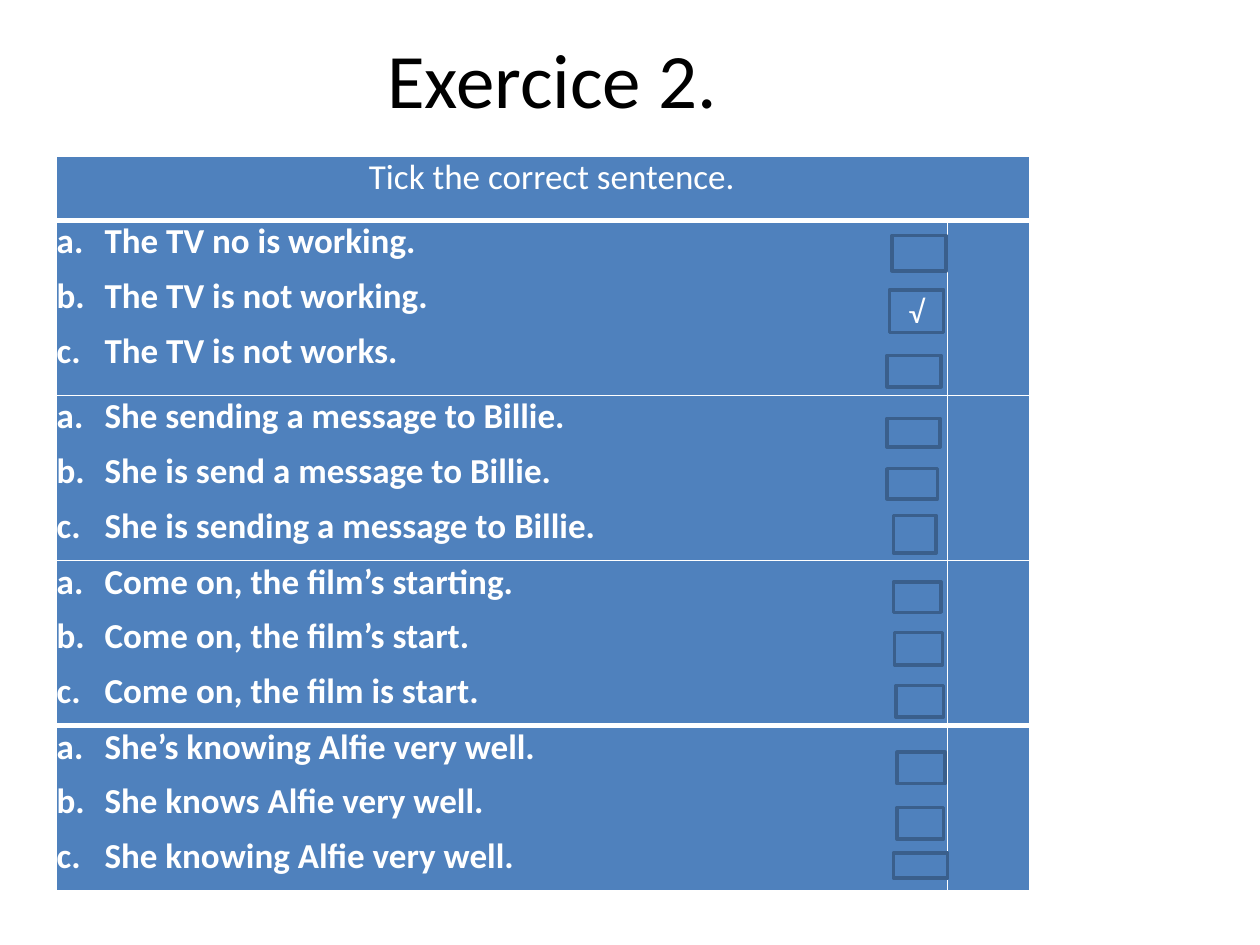
from lxml import etree
from pptx import Presentation
from pptx.dml.color import RGBColor
from pptx.enum.shapes import MSO_SHAPE
from pptx.enum.text import MSO_ANCHOR, PP_ALIGN
from pptx.oxml.ns import qn
from pptx.util import Inches, Pt

RECT = MSO_SHAPE.RECTANGLE
MIDDLE = MSO_ANCHOR.MIDDLE
CENTER = PP_ALIGN.CENTER

BLUE, DARK_BLUE, WHITE, BLACK = "4F81BD", "3A5F8C", "FFFFFF", "000000"

COLUMNS = [7.07, 0.65]
ROWS = [0.51, 1.39, 1.31, 1.31, 1.31]
QUESTIONS = [
    ["The TV no is working.", "The TV is not working.", "The TV is not works."],
    ["She sending a message to Billie.", "She is send a message to Billie.",
     "She is sending a message to Billie."],
    ["Come on, the film’s starting.", "Come on, the film’s start.",
     "Come on, the film is start."],
    ["She’s knowing Alfie very well.", "She knows Alfie very well.",
     "She knowing Alfie very well."],
]
# left, top, width, height, mark
TICK_BOXES = [
    (7.08, 1.87, 0.43, 0.28, ""),
    (7.06, 2.3, 0.43, 0.34, "√"),
    (7.04, 2.82, 0.43, 0.25, ""),
    (7.04, 3.32, 0.42, 0.23, ""),
    (7.04, 3.72, 0.4, 0.24, ""),
    (7.09, 4.09, 0.34, 0.3, ""),
    (7.09, 4.62, 0.38, 0.24, ""),
    (7.1, 5.02, 0.38, 0.26, ""),
    (7.11, 5.44, 0.38, 0.25, ""),
    (7.12, 5.97, 0.38, 0.25, ""),
    (7.12, 6.41, 0.37, 0.25, ""),
    (7.09, 6.77, 0.43, 0.2, ""),
]


def rgb(value):
    return RGBColor.from_string(value)


def add_element(parent, tag, **attrs):
    return etree.SubElement(parent, qn(tag), attrs)


class ExerciseSlide:
    font = "Calibri"

    def __init__(self, slide):
        self.slide = slide

    def run(self, p, text, color, **formats):
        r = p.add_run()
        r.text = text
        for name, value in {"name": self.font, **formats}.items():
            setattr(r.font, name, value)
        r.font.color.rgb = rgb(color)

    def title(self, text, box):
        tf = self.slide.shapes.add_textbox(*map(Inches, box)).text_frame
        tf.word_wrap = True
        tf.vertical_anchor = MIDDLE
        p = tf.paragraphs[0]
        p.alignment = CENTER
        self.run(p, text, BLACK, size=Pt(44))

    def tick_box(self, left, top, width, height, mark):
        sp = self.slide.shapes.add_shape(
            RECT, *map(Inches, (left, top, width, height)))
        sp.shadow.inherit = False
        sp.fill.solid()
        sp.fill.fore_color.rgb = rgb(BLUE)
        sp.line.color.rgb = rgb(DARK_BLUE)
        sp.line.width = Pt(2)
        if mark:
            tf = sp.text_frame
            tf.vertical_anchor = MIDDLE
            p = tf.paragraphs[0]
            p.alignment = CENTER
            self.run(p, mark, WHITE, size=Pt(18))

    def cell(self, cell, top=1, bottom=1):
        """Give a cell its white borders (widths in points), fill and margins."""
        tc_pr = cell._tc.get_or_add_tcPr()
        for tag, width in (("a:lnL", 1), ("a:lnR", 1),
                           ("a:lnT", top), ("a:lnB", bottom)):
            ln = add_element(tc_pr, tag, w=str(Pt(width)))
            add_element(add_element(ln, "a:solidFill"), "a:srgbClr", val=WHITE)
        cell.fill.solid()
        cell.fill.fore_color.rgb = rgb(BLUE)
        for side in ("left", "right", "top", "bottom"):
            setattr(cell, f"margin_{side}", 0)

    def lettered(self, tf, sentences):
        """Write sentences as a list lettered a., b., c."""
        for i, sentence in enumerate(sentences):
            p = tf.add_paragraph() if i else tf.paragraphs[0]
            p_pr = p._p.get_or_add_pPr()
            p_pr.set("marL", str(Inches(0.38)))
            p_pr.set("indent", str(-Inches(0.38)))
            add_element(p_pr, "a:buAutoNum", type="alphaLcPeriod")
            tabs = add_element(p_pr, "a:tabLst")
            add_element(tabs, "a:tab", pos=str(Inches(0.42)), algn="l")
            if i:
                p.space_before = Pt(6.9)
            self.run(p, sentence, WHITE, size=Pt(20), bold=True)

    def question_table(self, heading, questions, left, top):
        box = (left, top, sum(COLUMNS), sum(ROWS))
        table = self.slide.shapes.add_table(
            len(ROWS), len(COLUMNS), *map(Inches, box)).table
        table.first_row = table.horz_banding = False
        for column, width in zip(table.columns, COLUMNS):
            column.width = Inches(width)
        last = len(ROWS) - 1
        for i, (row, height) in enumerate(zip(table.rows, ROWS)):
            row.height = Inches(height)
            for cell in row.cells:
                self.cell(cell, top=3 if i == last else 1,
                          bottom=3 if i == 0 else 1)
        header = table.cell(0, 0)
        header.merge(table.cell(0, 1))
        p = header.text_frame.paragraphs[0]
        p.alignment = CENTER
        p._p.get_or_add_pPr().set("marL", str(Inches(0.14)))
        self.run(p, heading, WHITE, size=Pt(20))
        for i, sentences in enumerate(questions, 1):
            self.lettered(table.cell(i, 0).text_frame, sentences)


def main():
    prs = Presentation()
    prs.slide_width, prs.slide_height = Inches(10), Inches(7.5)
    s = ExerciseSlide(prs.slides.add_slide(prs.slide_layouts[6]))
    s.title("Exercice 2.", (0.53, 0.18, 7.71, 0.88))
    s.question_table("Tick the correct sentence.", QUESTIONS, 0.45, 1.24)
    for tick_box in TICK_BOXES:
        s.tick_box(*tick_box)
    prs.save("out.pptx")


if __name__ == "__main__":
    main()
